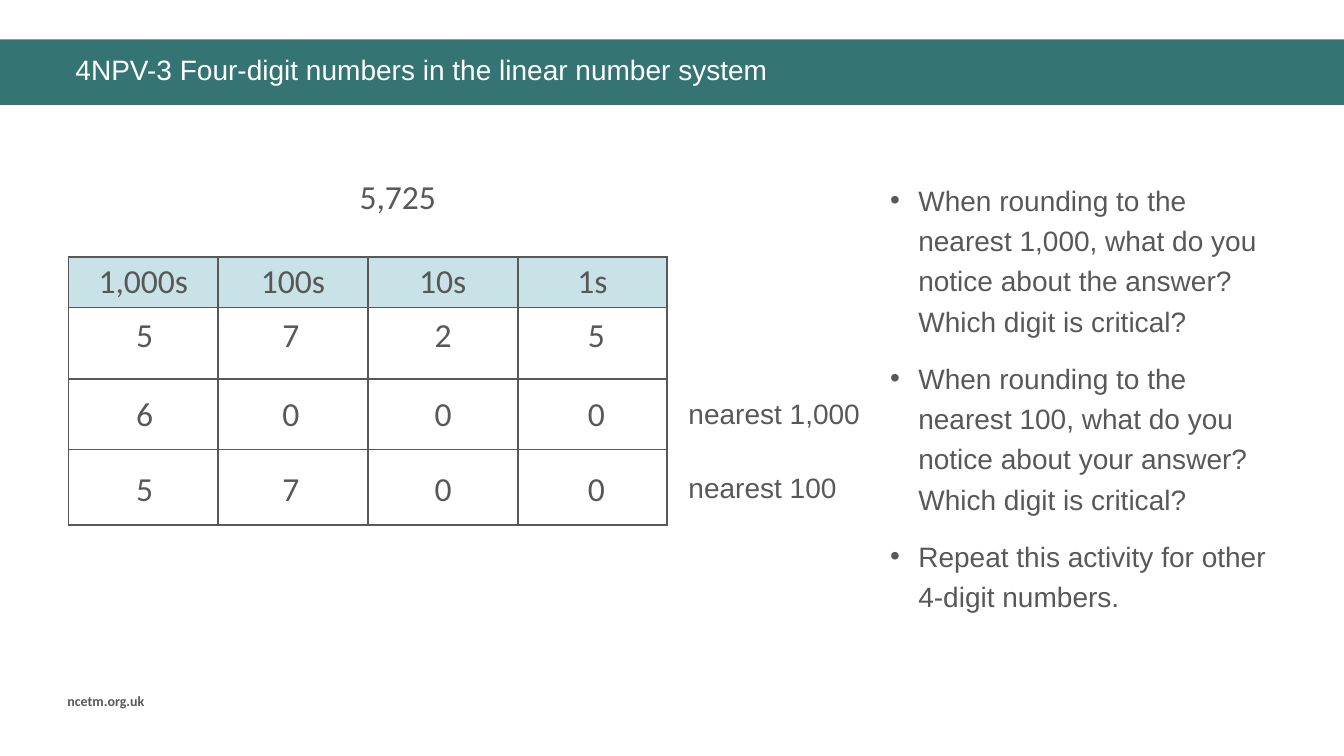
import pptx
import pptx.util
import pptx.dml.color
import pptx.enum.shapes
import pptx.enum.text
import pptx.oxml
import pptx.oxml.ns
import lxml.etree

RGBColor = pptx.dml.color.RGBColor
PP_ALIGN = pptx.enum.text.PP_ALIGN

TEAL = RGBColor(0x34, 0x75, 0x74)
PALE_BLUE = RGBColor(0xC8, 0xE2, 0xE8)
GREY = RGBColor(0x58, 0x58, 0x58)
WHITE = RGBColor(0xFF, 0xFF, 0xFF)

PX = 9144  # 100 px to the inch


def add_child(parent, tag, **attributes):
    return lxml.etree.SubElement(parent, pptx.oxml.ns.qn(tag), attributes)


def write(paragraph, text, font="Arial", size=20, color=GREY, bold=False,
          align=PP_ALIGN.LEFT, line_spacing=None):
    paragraph.alignment = align
    if line_spacing:
        paragraph.line_spacing = line_spacing
    run = paragraph.add_run()
    run.text = text
    run.font.name = font
    run.font.size = pptx.util.Pt(size)
    run.font.bold = bold
    run.font.color.rgb = color


class SlideBuilder:
    number_style = {"font": "Calibri", "size": 24, "align": PP_ALIGN.CENTER}

    def __init__(self, slide):
        self.slide = slide

    def box(self, *bounds):
        return [pptx.util.Emu(value * PX) for value in bounds]

    def band(self, left, top, width, height, color):
        shape = self.slide.shapes.add_shape(
            pptx.enum.shapes.MSO_SHAPE.RECTANGLE, *self.box(left, top, width, height))
        shape.shadow.inherit = False
        shape.fill.solid()
        shape.fill.fore_color.rgb = color
        shape.line.fill.background()

    def frame(self, left, top, width, height):
        shape = self.slide.shapes.add_textbox(*self.box(left, top, width, height))
        shape.text_frame.word_wrap = True
        return shape.text_frame

    def text(self, left, top, width, height, text, **style):
        write(self.frame(left, top, width, height).paragraphs[0], text, **style)

    def bullets(self, left, top, width, height, items):
        frame = self.frame(left, top, width, height)
        for index, item in enumerate(items):
            paragraph = frame.add_paragraph() if index else frame.paragraphs[0]
            properties = paragraph._p.get_or_add_pPr()
            properties.set("marL", str(28 * PX))
            properties.set("indent", str(-28 * PX))
            bullet_color = add_child(properties, "a:buClr")
            add_child(bullet_color, "a:srgbClr", val=str(GREY))
            add_child(properties, "a:buFont", typeface="Arial")
            add_child(properties, "a:buChar", char="•")
            paragraph.space_before = pptx.util.Pt(6 if index else 0)
            paragraph.space_after = pptx.util.Pt(6)
            write(paragraph, item, line_spacing=1.2)

    def line(self, left, right, y):
        connector = self.slide.shapes.add_connector(
            pptx.enum.shapes.MSO_CONNECTOR.STRAIGHT, *self.box(left, y, right, y))
        connector.line.color.rgb = GREY
        connector.line.width = pptx.util.Pt(1)
        add_child(connector._element.spPr, "a:effectLst")

    def border(self, cell):
        properties = cell._tc.get_or_add_tcPr()
        for index, side in enumerate(("a:lnL", "a:lnR", "a:lnT", "a:lnB")):
            edge = pptx.oxml.parse_xml(
                f'<{side} {pptx.oxml.ns.nsdecls("a")} w="19050"><a:solidFill>'
                f'<a:srgbClr val="{GREY}"/></a:solidFill></{side}>')
            properties.insert(index, edge)

    def table(self, left, top, width, row_heights, headings):
        shape = self.slide.shapes.add_table(
            len(row_heights), len(headings),
            *self.box(left, top, width, sum(row_heights)))
        table = shape.table
        for row, height in zip(table.rows, row_heights):
            row.height = pptx.util.Emu(height * PX)
        for column, heading in enumerate(headings):
            write(table.cell(0, column).text_frame.paragraphs[0], heading,
                  **self.number_style)
        for row_index, color in enumerate((PALE_BLUE, WHITE)):
            for cell in table.rows[row_index].cells:
                cell.fill.solid()
                cell.fill.fore_color.rgb = color
                self.border(cell)


def main():
    presentation = pptx.Presentation()
    presentation.slide_width = pptx.util.Emu(1333 * PX)
    presentation.slide_height = pptx.util.Emu(750 * PX)
    builder = SlideBuilder(presentation.slides.add_slide(presentation.slide_layouts[6]))

    # Title band and footer
    builder.band(0, 39, 1333, 65, TEAL)
    builder.text(57, 682, 121, 27, "ncetm.org.uk", font="Calibri", size=10, bold=True)
    builder.text(65, 51, 1232, 47, "4NPV-3 Four-digit numbers in the linear number system",
                 color=WHITE, line_spacing=0.9)

    # Place value chart
    builder.text(235, 170, 319, 50, "5,725", **builder.number_style)
    builder.table(68, 255, 594, (50, 216), ("1,000s", "100s", "10s", "1s"))
    for top, digits in ((307, "5725"), (385, "6000"), (459, "5700")):
        for left, digit in zip((115, 260, 411, 563), digits):
            builder.text(left, top, 57, 50, digit, **builder.number_style)
    for y in (376, 446):
        builder.line(68, 662, y)

    # Rounding labels
    for top, label in ((388, "nearest 1,000"), (462, "nearest 100")):
        builder.text(673, top, 206, 44, label)

    # Discussion questions
    builder.bullets(873, 170, 394, 448, (
        "When rounding to the nearest 1,000, what do you notice about the answer? "
        "Which digit is critical?",
        "When rounding to the nearest 100, what do you notice about your answer? "
        "Which digit is critical?",
        "Repeat this activity for other 4-digit numbers.",
    ))

    presentation.save("out.pptx")


if __name__ == "__main__":
    main()
